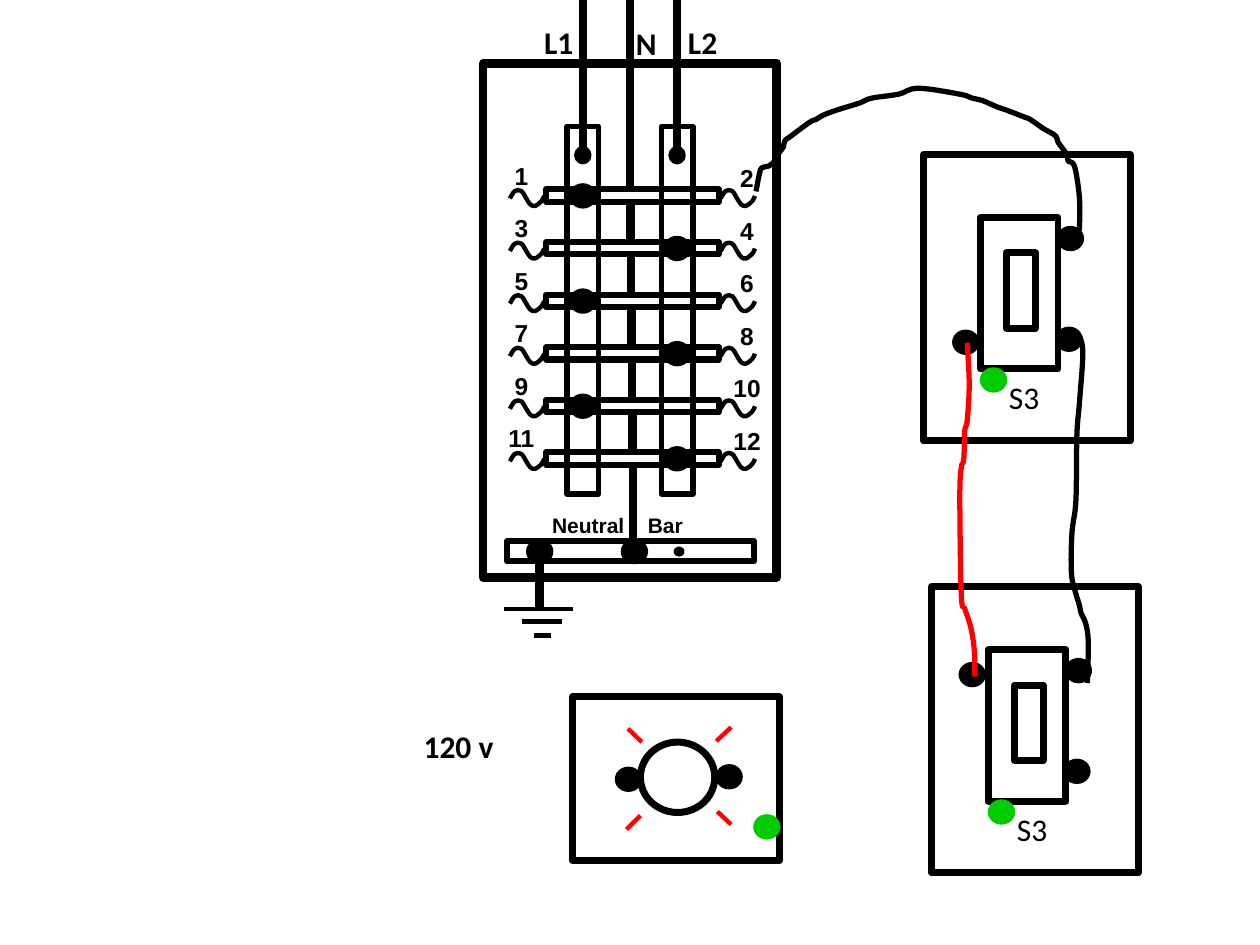
from dataclasses import dataclass

from lxml import etree
from pptx import Presentation
from pptx import util as u
from pptx.dml.color import RGBColor
from pptx.enum import shapes, text
from pptx.oxml.ns import qn

Cm, Pt = u.Cm, u.Pt
RECT, OVAL = shapes.MSO_SHAPE.RECTANGLE, shapes.MSO_SHAPE.OVAL


@dataclass(frozen=True)
class Theme:
    ink: str = "000000"
    red: str = "FF0000"
    green: str = "00CC00"
    heading_font: str = "Calibri"
    panel_font: str = "Arial"
    heading_size: float = 18
    number_size: float = 14
    bar_size: float = 12
    heavy: float = 5
    box: float = 4
    breaker: float = 3.5
    wire: float = 3
    thin: float = 2.5
    dot: float = 2


THEME = Theme()
TERMINAL = (0.48, 0.44)


class Region:
    """Draws parts in centimetres, measured from the corner of a box."""

    def __init__(self, slide, left, top):
        self.shapes, self.left, self.top = slide.shapes, left, top

    def at(self, x, y):
        return Cm(self.left + x), Cm(self.top + y)

    def outline(self, kind, x, y, width, height, weight, fill=None, color=THEME.ink):
        part = self.shapes.add_shape(kind, *self.at(x, y), Cm(width), Cm(height))
        part.shadow.inherit = False
        if fill:
            part.fill.solid()
            part.fill.fore_color.rgb = RGBColor.from_string(fill)
        else:
            part.fill.background()
        part.line.color.rgb = RGBColor.from_string(color)
        part.line.width = Pt(weight)

    def dot(self, x, y, size=TERMINAL, color=THEME.ink):
        """Filled ellipse centred on a point."""
        width, height = size
        self.outline(OVAL, x - width / 2, y - height / 2, width, height,
                     THEME.dot, color, color)

    def line(self, x1, y1, x2, y2, weight=THEME.heavy, color=THEME.ink):
        part = self.shapes.add_connector(
            shapes.MSO_CONNECTOR.STRAIGHT, *self.at(x1, y1), *self.at(x2, y2))
        part.line.color.rgb = RGBColor.from_string(color)
        part.line.width = Pt(weight)
        etree.SubElement(part._element.spPr, qn("a:effectLst"))

    def curve(self, points, weight=THEME.wire, color=THEME.ink):
        """Smooth open line through the points, made of cubic segments."""
        start, *rest = [self.at(x, y) for x, y in bezier_points(points)]
        builder = self.shapes.build_freeform(*start)
        builder.add_line_segments(rest, close=False)
        part = builder.convert_to_shape()
        outline = next(part._element.iter(qn("a:path")))
        steps = outline.findall(qn("a:lnTo"))
        for triple in zip(steps[::3], steps[1::3], steps[2::3]):
            cubic = etree.SubElement(outline, qn("a:cubicBezTo"))
            for step in triple:
                cubic.append(step[0])
                outline.remove(step)
        part.shadow.inherit = False
        part.fill.background()
        part.line.color.rgb = RGBColor.from_string(color)
        part.line.width = Pt(weight)

    def label(self, lines, x, y, width, height, size=THEME.heading_size,
              font=THEME.heading_font, bold=True, wrap=True, centred=False,
              leading=None):
        frame = self.shapes.add_textbox(
            *self.at(x, y), Cm(width), Cm(height)).text_frame
        frame.word_wrap = wrap
        frame.auto_size = text.MSO_AUTO_SIZE.SHAPE_TO_FIT_TEXT
        for index, words in enumerate(lines):
            para = frame.add_paragraph() if index else frame.paragraphs[0]
            if centred:
                para.alignment = text.PP_ALIGN.CENTER
            if leading:
                para.line_spacing = Pt(leading)
                para.space_before = Pt(leading if index else 0)
            run = para.add_run()
            run.text = words
            run.font.size, run.font.name, run.font.bold = Pt(size), font, bold
            run.font.color.rgb = RGBColor.from_string(THEME.ink)
        return frame


def bezier_points(points):
    """Start point, then two controls and an end for each Catmull-Rom segment."""
    padded = [points[0], *points, points[-1]]
    result = [points[0]]
    for before, start, end, after in zip(padded, padded[1:], padded[2:], padded[3:]):
        result += [
            tuple(s + (e - b) / 6 for b, s, e in zip(before, start, end)),
            tuple(e - (a - s) / 6 for s, e, a in zip(start, end, after)),
            end]
    return result


def breaker_panel(slide, left, top, width=5.92, height=10.36):
    panel = Region(slide, left, top)
    panel.outline(RECT, 0, 0, width, height, THEME.heavy)
    buses = (2.01, 3.91)
    for bus in buses:
        panel.outline(RECT, bus - 0.32, 1.27, 0.64, 7.41, THEME.wire)
        panel.line(bus, -top, bus, 1.7)
        panel.dot(bus, 1.85, (0.28, 0.3))

    breaker_height = 0.25
    rows = [2.54 + 1.06 * row for row in range(6)]
    squiggle = [(0, 0.18), (0.1, 0.03), (0.23, 0.03), (0.33, 0.18),
                (0.41, 0.3), (0.51, 0.33), (0.64, 0.23), (0.69, 0.13)]
    for row, y in enumerate(rows):
        panel.outline(RECT, 1.27, y, 3.48, breaker_height, THEME.breaker)
        panel.dot(buses[row % 2], y + 0.13)
        for x in (0.54, 4.79):
            panel.curve([(x + dx, y + dy) for dx, dy in squiggle], THEME.thin)
    for first, x, y in ((1, 0.12, 1.9), (2, 4.67, 1.95)):
        panel.label([str(n) for n in range(first, 13, 2)], x, y, 1.3, 6.15,
                    THEME.number_size, THEME.panel_font, centred=True, leading=15)

    panel.outline(RECT, 0.48, 9.63, 4.98, 0.41, THEME.breaker)
    starts = [-top] + [y + breaker_height for y in rows]
    for index, (start, end) in enumerate(zip(starts, rows + [9.91])):
        x = 2.96 + 0.01 * index
        panel.line(x, start, x, end)
    panel.dot(3.05, 9.84)
    panel.dot(3.95, 9.84, (0.15, 0.13))
    bar = panel.label(["Neutral\tBar"], 1.14, 8.92, 3.3, 0.76,
                      THEME.bar_size, THEME.panel_font)
    tabs = etree.SubElement(bar.paragraphs[0]._p.get_or_add_pPr(), qn("a:tabLst"))
    etree.SubElement(tabs, qn("a:tab"), pos=str(Cm(1.93)), algn="l")

    for name, x, y in (("L1", 0.98, -0.95), ("L2", 3.88, -0.94), ("N", 2.83, -0.92)):
        panel.label([name], x, y, 1.17, 1.02)

    panel.dot(1.14, 9.84)
    panel.line(1.14, 9.88, 1.14, 10.97)
    for x1, x2, y in ((0.42, 1.82, 11), (0.78, 1.59, 11.25), (1.03, 1.36, 11.53)):
        panel.line(x1, y, x2, y, THEME.thin)


def three_way_switch(slide, left, top, common):
    """Switch box; common is the centre of the left terminal."""
    switch = Region(slide, left, top)
    for box in ((0, 0, 4.17, 5.77), (1.14, 1.27, 1.57, 3.05), (1.67, 1.98, 0.58, 1.52)):
        switch.outline(RECT, *box, THEME.box)
    for terminal in ((2.93, 3.72), (2.96, 1.69), common):
        switch.dot(*terminal)
    switch.dot(1.41, 4.54, color=THEME.green)
    switch.label(["S3"], 1.47, 4.37, 1.14, 1.02, bold=False, wrap=False)


def lamp(slide, left, top):
    fixture = Region(slide, left, top)
    fixture.outline(RECT, 0, 0, 4.17, 3.3, THEME.box)
    fixture.outline(OVAL, 1.37, 0.91, 1.5, 1.42, THEME.box)
    for ray in ((1.12, 0.64, 1.4, 0.91), (3.2, 0.61, 2.9, 0.89),
                (2.92, 2.31, 3.2, 2.57), (1.09, 2.67, 1.37, 2.39)):
        fixture.line(*ray, THEME.thin, THEME.red)
    fixture.dot(1.13, 1.66)
    fixture.dot(3.16, 1.61)
    fixture.dot(3.92, 2.62, color=THEME.green)


def wiring(slide):
    Region(slide, 15.21, 1.75).curve([
        (0.03, 2.11), (0.1, 1.75), (0.15, 1.63), (0.28, 1.6), (0.41, 1.5),
        (0.48, 1.35), (0.58, 1.22), (0.61, 1.09), (0.74, 0.99), (1.12, 0.71),
        (1.24, 0.66), (1.37, 0.58), (1.63, 0.48), (2.11, 0.33), (2.36, 0.23),
        (2.9, 0.15), (3.3, 0.03), (4.14, 0.15), (4.39, 0.23), (4.6, 0.28),
        (4.9, 0.41), (5.05, 0.46), (5.44, 0.61), (5.56, 0.66), (5.82, 0.84),
        (6.07, 0.99), (6.12, 1.12), (6.3, 1.37), (6.32, 1.5), (6.45, 1.6),
        (6.55, 2.24), (6.55, 2.9)])
    Region(slide, 21.56, 6.76).curve([
        (0.2, 0), (0.27, 0.36), (0.2, 1.37), (0.15, 2.01), (0.13, 3.33),
        (0.05, 3.99), (0.04, 4.8), (0.13, 5.21), (0.2, 5.44), (0.23, 5.59),
        (0.33, 5.82), (0.38, 6.2), (0.36, 7.01)])
    Region(slide, 19.35, 6.91).curve([
        (0.15, 0), (0.19, 0.84), (0.15, 1.57), (0.1, 1.78), (0.08, 2.36),
        (0.03, 2.51), (0, 3.12), (0.03, 5.08), (0.1, 5.36), (0.18, 5.59),
        (0.25, 5.87), (0.3, 6.3), (0.3, 6.73)], color=THEME.red)


def main():
    deck = Presentation()
    deck.slide_width, deck.slide_height = Cm(25.4), Cm(19.05)
    slide = deck.slides.add_slide(deck.slide_layouts[6])
    breaker_panel(slide, 9.74, 1.28)
    three_way_switch(slide, 18.62, 3.12, common=(0.85, 3.78))
    three_way_switch(slide, 18.78, 11.83, common=(0.82, 1.77))
    lamp(slide, 11.54, 14.05)
    Region(slide, 8.28, 14.53).label(["120 v"], 0, 0, 1.93, 1.02,
                                     wrap=False, centred=True)
    wiring(slide)
    deck.save("out.pptx")


if __name__ == "__main__":
    main()
